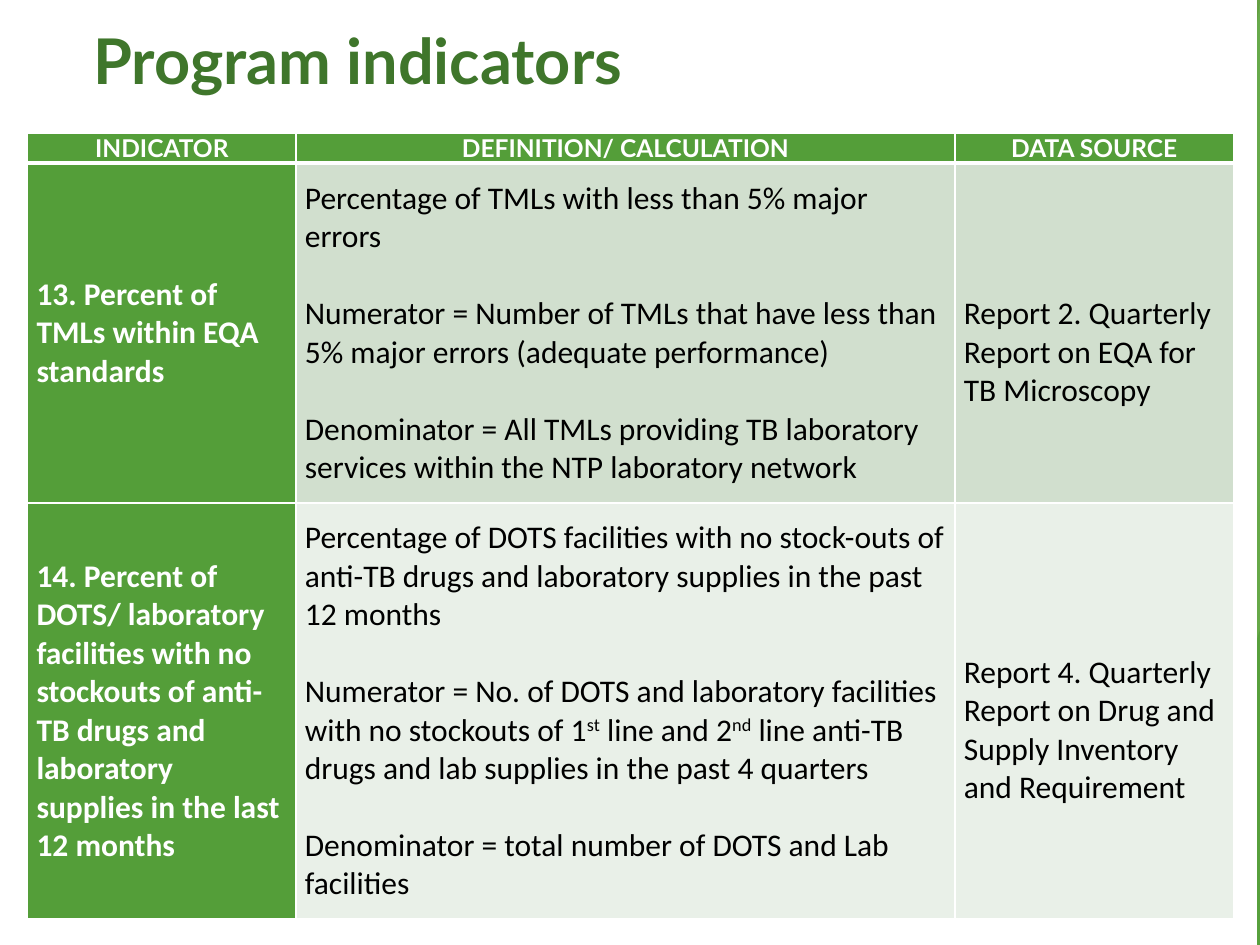
from dataclasses import dataclass

from lxml.etree import SubElement
from pptx import Presentation
from pptx.dml.color import RGBColor
from pptx.enum.shapes import MSO_SHAPE
from pptx.enum.text import MSO_ANCHOR, PP_ALIGN
from pptx.oxml import parse_xml
from pptx.oxml.ns import nsdecls, qn
from pptx.util import Inches, Pt


@dataclass(frozen=True)
class Theme:
    green: str = "549E39"
    title_green: str = "3F762B"
    lime: str = "8AB833"
    olive: str = "678A26"
    light_green: str = "93D07D"
    white: str = "FFFFFF"
    black: str = "000000"
    bands: tuple = ("D1DFCE", "E9F0E8")
    head_font: str = "Lato"
    body_font: str = "Calibri"
    title_size: int = 36
    head_size: int = 14
    body_size: int = 18
    line_height: int = 22


THEME = Theme()
TITLE = dict(name=THEME.head_font, size=Pt(THEME.title_size), bold=True, color=THEME.title_green)
HEAD = dict(name=THEME.head_font, size=Pt(THEME.head_size), bold=True, color=THEME.white)
LABEL = dict(name=THEME.body_font, size=Pt(THEME.body_size), bold=True, color=THEME.white)
BODY = {**LABEL, "bold": False, "color": THEME.black}

# Colour, opacity in percent, and the left edge as (x, y) from top to bottom;
# every facet reaches the right edge of the page.
FACETS = (
    (THEME.green, 30, (9.75, 0), (7.54, 7.5)),
    (THEME.green, 20, (7.88, 0), (9.19, 7.5)),
    (THEME.lime, 72, (10, 4.29), (7.26, 7.5)),
    (THEME.olive, 70, (7.67, 0), (9.7, 7.5)),
    (THEME.light_green, 70, (9.81, 0), (9.07, 7.5)),
    (THEME.green, 65, (8.83, 0), (9.86, 7.5)),
    (THEME.green, 80, (10, 5.35), (8.81, 7.5)),
)

HEADINGS = ("INDICATOR", "DEFINITION/ CALCULATION", "DATA SOURCE")
# In a definition, "^" encloses superscript text.
INDICATORS = (
    (
        "13. Percent of TMLs within EQA standards",
        (
            "Percentage of TMLs with less than 5% major errors",
            "Numerator = Number of TMLs that have less than 5% major errors (adequate performance)",
            "Denominator = All TMLs providing TB laboratory services within the NTP laboratory network",
        ),
        "Report 2. Quarterly Report on EQA for TB Microscopy",
    ),
    (
        "14. Percent of DOTS/ laboratory facilities with no stockouts of anti-TB drugs "
        "and laboratory supplies in the last 12 months",
        (
            "Percentage of DOTS facilities with no stock-outs of anti-TB drugs "
            "and laboratory supplies in the past 12 months",
            "Numerator = No. of DOTS and laboratory facilities with no stockouts of "
            "1^st^ line and 2^nd^ line anti-TB drugs and lab supplies in the past 4 quarters",
            "Denominator = total number of DOTS and Lab facilities",
        ),
        "Report 4. Quarterly Report on Drug and Supply Inventory and Requirement",
    ),
)


def set_attributes(target, values):
    for name, value in values.items():
        setattr(target, name, value)


def add_text(para, text, style):
    for index, part in enumerate(text.split("^")):
        span = para.add_run()
        span.text = part
        set_attributes(span.font, {k: v for k, v in style.items() if k != "color"})
        span.font.color.rgb = RGBColor.from_string(style["color"])
        if index % 2:
            span.font._element.set("baseline", "30000")


def set_borders(cell, widths):
    """Draw white cell borders; widths maps L, R, T, B to points."""
    properties = cell._tc.get_or_add_tcPr()
    for index, (side, width) in enumerate(widths.items()):
        line = parse_xml(f'<a:ln{side} {nsdecls("a")} w="{Pt(width)}"/>')
        fill = SubElement(line, qn("a:solidFill"))
        SubElement(fill, qn("a:srgbClr"), val=THEME.white)
        properties.insert(index, line)


def fill_cell(cell, texts, style, fill, inset=0.07, align=PP_ALIGN.LEFT, top=0):
    cell.fill.solid()
    cell.fill.fore_color.rgb = RGBColor.from_string(fill)
    set_attributes(cell, dict(
        margin_left=Inches(inset), margin_right=Inches(inset),
        margin_top=top, margin_bottom=0, vertical_anchor=MSO_ANCHOR.MIDDLE,
    ))
    frame = cell.text_frame
    for index, text in enumerate(texts):
        para = frame.add_paragraph() if index else frame.paragraphs[0]
        para.alignment = align
        if index:
            para.space_before = Pt(THEME.line_height)
        add_text(para, text, style)


def paint(shape, color, opacity=100):
    shape.shadow.inherit = False
    shape.fill.solid()
    shape.fill.fore_color.rgb = RGBColor.from_string(color)
    shape.line.fill.background()
    if opacity < 100:
        swatch = next(shape._element.spPr.iter(qn("a:srgbClr")))
        SubElement(swatch, qn("a:alpha"), val=str(opacity * 1000))


def add_backdrop(page, width, height, panel):
    """Layer the facets, then cover all but the right edge with a white panel."""
    for color, opacity, upper, lower in FACETS:
        corners = [lower, (width, height), (width, upper[1])]
        builder = page.shapes.build_freeform(*upper, scale=Inches(1))
        builder.add_line_segments(corners, close=True)
        paint(builder.convert_to_shape(), color, opacity)
    cover = page.shapes.add_shape(MSO_SHAPE.RECTANGLE, *map(Inches, panel))
    paint(cover, THEME.white)
    cover.line.color.rgb = RGBColor.from_string(THEME.white)
    cover.line.width = Pt(1.5)


def add_title(page, box, text):
    title = page.shapes.title
    set_attributes(title, dict(zip(("left", "top", "width", "height"), map(Inches, box))))
    frame = title.text_frame
    set_attributes(frame, dict(vertical_anchor=MSO_ANCHOR.MIDDLE, margin_bottom=Inches(0.15)))
    frame.paragraphs[0].alignment = PP_ALIGN.LEFT
    add_text(frame.paragraphs[0], text, TITLE)


def add_indicator_table(page, left, top, widths, heights):
    box = map(Inches, (left, top, sum(widths), sum(heights)))
    table = page.shapes.add_table(len(heights), len(widths), *box).table
    for column, width in zip(table.columns, widths):
        column.width = Inches(width)
    for row, height in zip(table.rows, heights):
        row.height = Inches(height)

    for column, heading in enumerate(HEADINGS):
        fill_cell(table.cell(0, column), [heading], HEAD, THEME.green, 0.06, PP_ALIGN.CENTER)
    for row, (label, definition, source) in enumerate(INDICATORS, 1):
        band = THEME.bands[row - 1]
        fill_cell(table.cell(row, 0), [label], LABEL, THEME.green)
        fill_cell(table.cell(row, 1), definition, BODY, band)
        fill_cell(table.cell(row, 2), [source], BODY, band, top=Pt(THEME.line_height))

    for row in range(len(heights)):
        for column in range(len(widths)):
            set_borders(table.cell(row, column), dict(
                L=1, R=1, T=3 if row == 1 else 1, B=3 if row == 0 else 1,
            ))


def main():
    deck = Presentation()
    deck.slide_width, deck.slide_height = Inches(10), Inches(7.5)
    page = deck.slides.add_slide(deck.slide_layouts[5])
    add_backdrop(page, 10, 7.5, (-0.03, -0.02, 10, 7.52))
    # The title stands in front of the panel.
    page.shapes._spTree.append(page.shapes.title._element)
    add_title(page, (0.64, 0.12, 8.67, 0.8), "Program indicators")
    add_indicator_table(page, 0.22, 1.06, (2.13, 5.23, 2.21), (0.23, 2.7, 3.3))
    deck.save("out.pptx")


if __name__ == "__main__":
    main()
